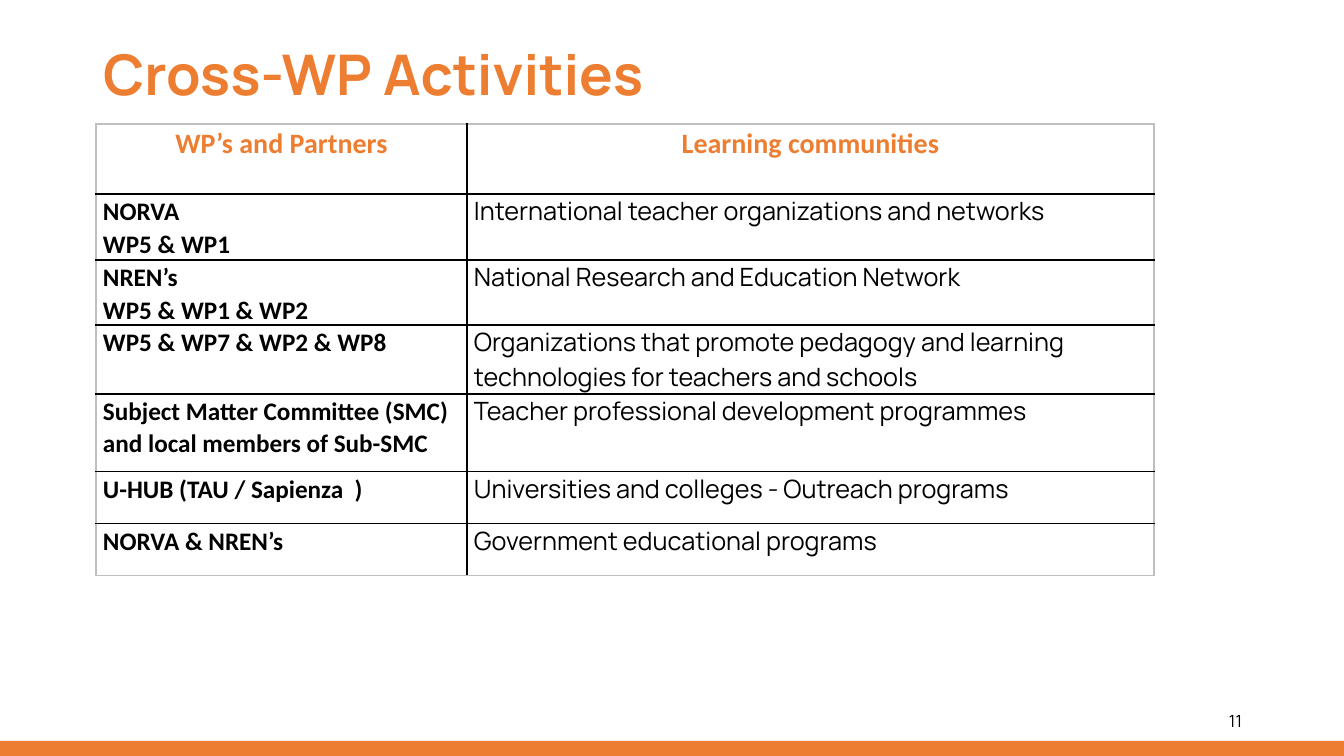
from lxml import etree
from pptx import Presentation
from pptx.dml.color import RGBColor
from pptx.enum import shapes, text
from pptx.util import Emu, Pt

ORANGE = RGBColor(0xED, 0x7D, 0x31)
BLACK = RGBColor(0, 0, 0)
GREY = RGBColor(0xBF, 0xBF, 0xBF)
WIDE, HIGH = 1344, 756
SCALE = 12192000 / WIDE
NS = "http://schemas.openxmlformats.org/drawingml/2006/main"

HEADS = ["WP’s and Partners", "Learning communities"]
ROWS = [
    ("NORVA\nWP5 & WP1", "International teacher organizations and networks"),
    ("NREN’s\nWP5 & WP1 & WP2", "National Research and Education Network"),
    ("WP5 & WP7 & WP2 & WP8",
     "Organizations that promote pedagogy and learning technologies "
     "for teachers and schools"),
    ("Subject Matter Committee (SMC) and local members of Sub-SMC",
     "Teacher professional development programmes"),
    ("U-HUB (TAU / Sapienza  )", "Universities and colleges - Outreach programs"),
    ("NORVA & NREN’s", "Government educational programs"),
]


def px(n):
    return Emu(round(n * SCALE))


def write(frame, words, font="Manrope", size=18, color=BLACK, bold=False,
          align=text.PP_ALIGN.LEFT, space=1.0):
    """Fill a text frame, one paragraph per line of words."""
    frame.word_wrap = True
    for i, line in enumerate(words.split("\n")):
        para = frame.add_paragraph() if i else frame.paragraphs[0]
        para.alignment = align
        para.line_spacing = space
        para.space_before = para.space_after = Pt(0)
        run = para.add_run()
        run.text = line
        run.font.name = font
        run.font.size = Pt(size)
        run.font.bold = bold
        run.font.color.rgb = color


class Deck:
    def __init__(self):
        self.prs = Presentation()
        self.prs.slide_width, self.prs.slide_height = px(WIDE), px(HIGH)
        self.slide = self.prs.slides.add_slide(self.prs.slide_layouts[5])

    def bar(self, *box):
        shape = self.slide.shapes.add_shape(
            shapes.MSO_SHAPE.RECTANGLE, *map(px, box))
        shape.shadow.inherit = False
        shape.fill.solid()
        shape.fill.fore_color.rgb = ORANGE
        shape.line.fill.background()

    def title(self, words, *box):
        shape = self.slide.shapes.title
        shape.left, shape.top, shape.width, shape.height = map(px, box)
        frame = shape.text_frame
        frame.auto_size = text.MSO_AUTO_SIZE.NONE
        frame.vertical_anchor = text.MSO_ANCHOR.MIDDLE
        write(frame, words, size=40, color=ORANGE, bold=True, space=0.9)

    def label(self, words, *box, **style):
        frame = self.slide.shapes.add_textbox(*map(px, box)).text_frame
        frame.vertical_anchor = text.MSO_ANCHOR.MIDDLE
        write(frame, words, **style)

    def edge(self, cell, sides):
        """Draw the four cell borders, given as (side, colour) in L R T B order."""
        props = cell._tc.get_or_add_tcPr()
        for i, (side, color) in enumerate(sides):
            line = etree.Element(f"{{{NS}}}ln{side}", w=str(Pt(1)))
            fill = etree.SubElement(line, f"{{{NS}}}solidFill")
            etree.SubElement(fill, f"{{{NS}}}srgbClr", val=str(color))
            props.insert(i, line)

    def table(self, left, top, cols, tall):
        grid = self.slide.shapes.add_table(
            len(tall), len(cols), px(left), px(top),
            px(sum(cols)), px(sum(tall))).table
        grid.first_row = grid.horz_banding = False
        for col, size in zip(grid.columns, cols):
            col.width = px(size)
        for row, size in zip(grid.rows, tall):
            row.height = px(size)
        for r, row in enumerate([HEADS, *ROWS]):
            for c, words in enumerate(row):
                cell = grid.cell(r, c)
                cell.margin_left = cell.margin_right = px(7)
                cell.margin_top = cell.margin_bottom = 0
                cell.fill.background()
                outer = [c == 0, c == len(cols) - 1, r == 0, r == len(tall) - 1]
                self.edge(cell, [(side, GREY if out else BLACK)
                                 for side, out in zip("LRTB", outer)])
                if r == 0:
                    style = dict(font="Calibri", size=20, color=ORANGE, bold=True,
                                 align=text.PP_ALIGN.CENTER, space=1.07)
                elif c == 0:
                    style = dict(font="Calibri", bold=True, space=1.07)
                else:
                    style = {}
                write(cell.text_frame, words, **style)


def main():
    deck = Deck()
    # Footer bar and heading
    deck.bar(0, 741, WIDE, 15)
    deck.title("Cross-WP Activities", 93, 27, 1016, 101)
    # Page number
    deck.label("11", 950, 701, 302, 40, size=12, align=text.PP_ALIGN.RIGHT)
    # Partners and their communities
    deck.table(96, 124, [371, 687], [70, 66, 65, 69, 78, 52, 52])
    deck.prs.save("out.pptx")


if __name__ == "__main__":
    main()
